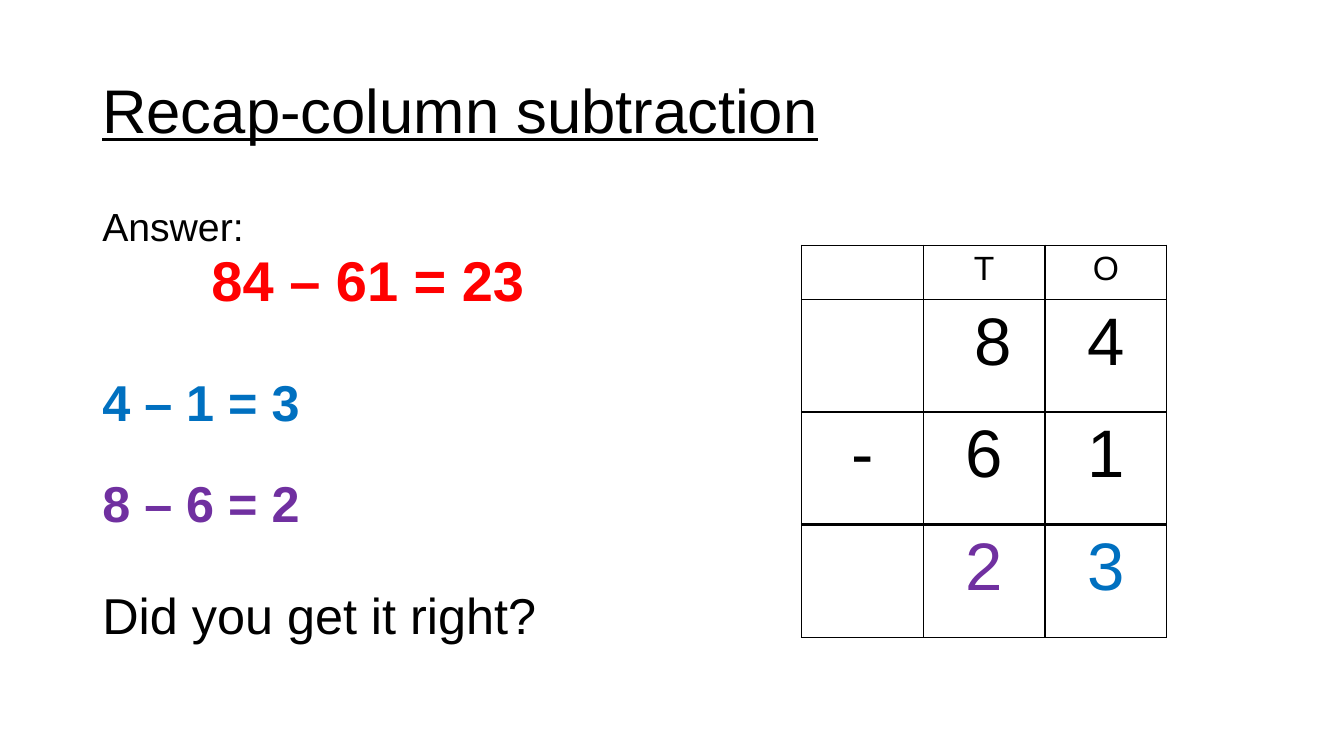
from pptx import Presentation, util as u
from pptx.dml import color
from pptx.enum import text
from pptx.oxml import parse_xml
from pptx.oxml.ns import nsdecls

BLACK, RED, BLUE, PURPLE = "000000", "FF0000", "0070C0", "7030A0"


def rgb(value):
    return color.RGBColor.from_string(value)


class Lesson:
    font = "Arial"

    def __init__(self, deck):
        self.slide = deck.slides.add_slide(deck.slide_layouts[6])

    def run(self, paragraph, words, size, ink=BLACK, bold=False, underline=False):
        run = paragraph.add_run()
        run.text = words
        run.font.name = self.font
        run.font.size = u.Pt(size)
        run.font.bold = bold
        run.font.underline = underline
        run.font.color.rgb = rgb(ink)

    def text(self, left, top, width, height, lines, spacing=0.9, anchor=text.MSO_ANCHOR.TOP):
        box = self.slide.shapes.add_textbox(*map(u.Pt, (left, top, width, height)))
        frame = box.text_frame
        frame.word_wrap = True
        frame.vertical_anchor = anchor
        for i, (words, style, gap, indent) in enumerate(lines):
            paragraph = frame.add_paragraph() if i else frame.paragraphs[0]
            paragraph.line_spacing = spacing
            paragraph.space_before = u.Pt(gap)
            if indent:
                paragraph._p.get_or_add_pPr().set("indent", str(u.Pt(indent)))
            self.run(paragraph, words, **style)

    def border(self, cell, side, width):
        cell._tc.get_or_add_tcPr().append(parse_xml(
            f'<a:{side} {nsdecls("a")} w="{u.Pt(width)}"><a:solidFill>'
            f'<a:srgbClr val="{BLACK}"/></a:solidFill></a:{side}>'))

    def table(self, left, top, column, heights, rows, sizes, inks, ruled_row):
        count = len(rows[0])
        grid = self.slide.shapes.add_table(
            len(rows), count, *map(u.Pt, (left, top, column * count, sum(heights)))).table
        grid.first_row = grid.horz_banding = False
        for width in grid.columns:
            width.width = u.Pt(column)
        for r, digits in enumerate(rows):
            grid.rows[r].height = u.Pt(heights[r])
            for c, digit in enumerate(digits):
                cell = grid.cell(r, c)
                for side in ("lnL", "lnR", "lnT", "lnB"):
                    ruled = (r, side) in ((ruled_row, "lnB"), (ruled_row + 1, "lnT"))
                    self.border(cell, side, 2.25 if ruled else 1)
                cell.fill.background()
                if digit:
                    paragraph = cell.text_frame.paragraphs[0]
                    paragraph.alignment = text.PP_ALIGN.CENTER
                    self.run(paragraph, digit, sizes[r], inks.get((r, c), BLACK))


def main():
    deck = Presentation()
    deck.slide_width, deck.slide_height = u.Pt(960), u.Pt(540)
    lesson = Lesson(deck)
    lesson.text(66, 28.75, 828, 104.4, [
        ("Recap-column subtraction", dict(size=44, underline=True), 0, 0),
    ], anchor=text.MSO_ANCHOR.MIDDLE)
    lesson.text(66, 143.75, 828, 342.6, [
        ("Answer:", dict(size=28), 0, 0),
        ("84 – 61 = 23", dict(size=40, ink=RED, bold=True), 0, 78),
        ("4 – 1 = 3", dict(size=36, ink=BLUE, bold=True), 43.7, 0),
        ("8 – 6 = 2", dict(size=36, ink=PURPLE, bold=True), 30.6, 0),
        ("Did you get it right?", dict(size=36), 39.3, 0),
    ], spacing=0.95)
    lesson.table(
        572.4, 175.2, 87, [38.6, 80.5, 80.5, 80.5],
        [["", "T", "O"], ["", " 8", "4"], ["-", "6", "1"], ["", "2", "3"]],
        sizes=[24, 48, 48, 48], inks={(3, 1): PURPLE, (3, 2): BLUE}, ruled_row=2)
    deck.save("out.pptx")


if __name__ == "__main__":
    main()
